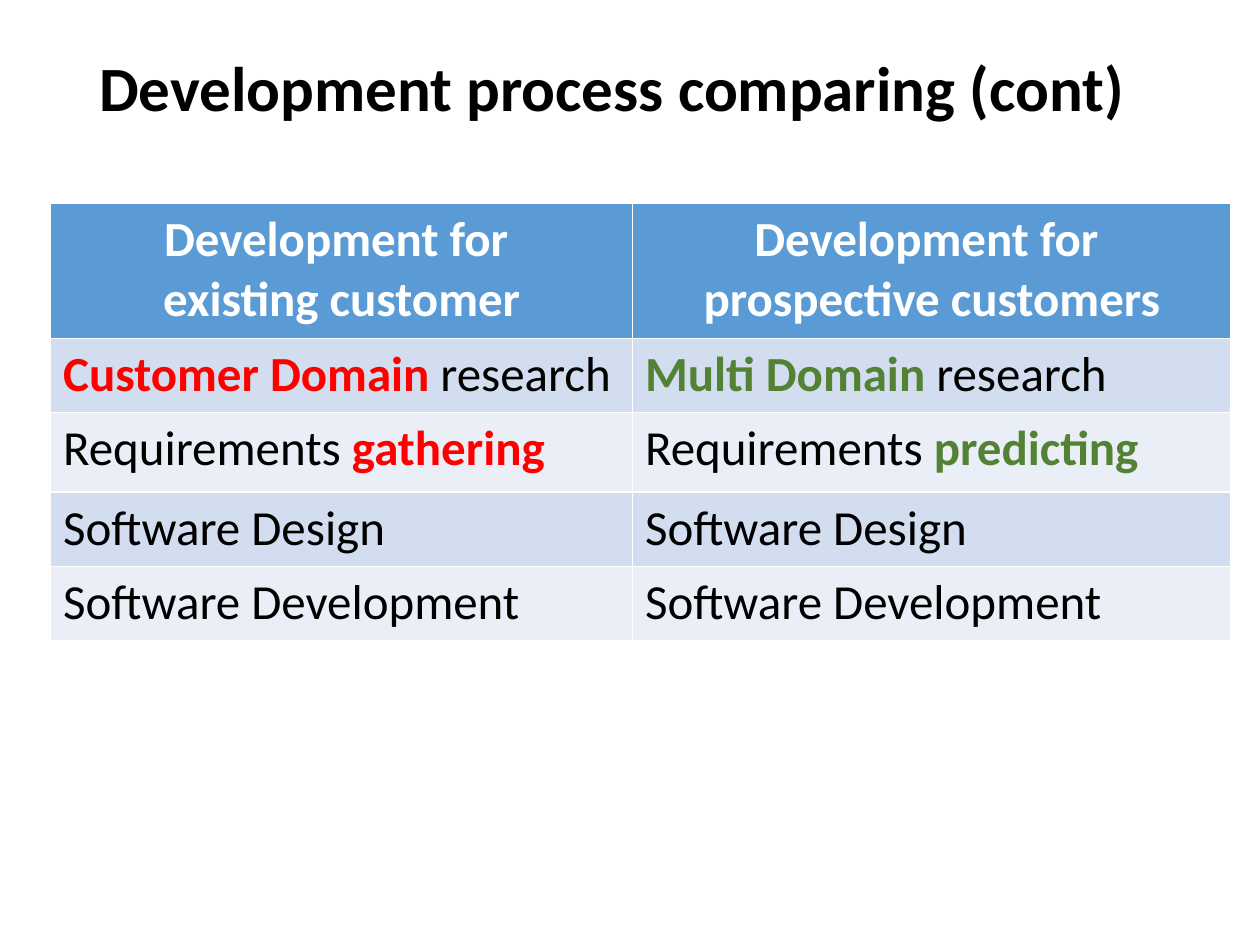
"""Build a slide comparing two development processes in a table."""
import pptx
import pptx.util
import pptx.dml.color
import pptx.enum.text

Cm = pptx.util.Cm
Pt = pptx.util.Pt

FONT = "Calibri"
HUES = {
    "black": "000000",
    "white": "FFFFFF",
    "red": "FF0000",
    "green": "548235",
    "head": "5B9BD5",
    "dark": "D2DEEF",
    "light": "EAEFF7",
}
WIDTHS = [11.73, 12.07]
HEIGHTS = [2.72, 1.5, 1.6, 1.5, 1.5]
HEADS = [
    ["Development for ", "existing customer"],
    ["Development for ", "prospective customers"],
]
ROWS = [
    [[("Customer Domain ", "red"), ("research", "black")],
     [("Multi Domain ", "green"), ("research", "black")]],
    [[("Requirements ", "black"), ("gathering", "red")],
     [("Requirements ", "black"), ("predicting", "green")]],
    [[("Software Design", "black")]] * 2,
    [[("Software Development", "black")]] * 2,
]


def tint(name):
    return pptx.dml.color.RGBColor.from_string(HUES[name])


def add_run(para, text, size, hue, bold):
    run = para.add_run()
    run.text = text
    run.font.name = FONT
    run.font.size = Pt(size)
    run.font.bold = bold
    run.font.color.rgb = tint(hue)


def fill_cell(cell, hue):
    cell.fill.solid()
    cell.fill.fore_color.rgb = tint(hue)


def add_head(cell, lines):
    fill_cell(cell, "head")
    frame = cell.text_frame
    for i, line in enumerate(lines):
        para = frame.add_paragraph() if i else frame.paragraphs[0]
        para.alignment = pptx.enum.text.PP_ALIGN.CENTER
        add_run(para, line, 28, "white", True)


def add_entry(cell, parts, band):
    fill_cell(cell, band)
    for text, hue in parts:
        add_run(cell.text_frame.paragraphs[0], text, 28, hue, hue != "black")


def add_grid(slide):
    frame = slide.shapes.add_table(
        len(HEIGHTS), len(WIDTHS), Cm(1.02), Cm(4.1),
        Cm(sum(WIDTHS)), Cm(sum(HEIGHTS)))
    grid = frame.table
    for col, width in zip(grid.columns, WIDTHS):
        col.width = Cm(width)
    for row, height in zip(grid.rows, HEIGHTS):
        row.height = Cm(height)
    for c, lines in enumerate(HEADS):
        add_head(grid.cell(0, c), lines)
    for r, row in enumerate(ROWS, 1):
        for c, parts in enumerate(row):
            add_entry(grid.cell(r, c), parts, "dark" if r % 2 else "light")


def add_title(slide, text):
    box = slide.shapes.add_textbox(Cm(1.75), Cm(1.02), Cm(23.06), Cm(1.65))
    frame = box.text_frame
    frame.word_wrap = True
    frame.vertical_anchor = pptx.enum.text.MSO_ANCHOR.MIDDLE
    para = frame.paragraphs[0]
    para.line_spacing = 0.9
    add_run(para, text, 36, "black", True)


def main():
    deck = pptx.Presentation()
    deck.slide_width = Cm(25.4)
    deck.slide_height = Cm(19.05)
    slide = deck.slides.add_slide(deck.slide_layouts[6])
    add_grid(slide)
    add_title(slide, "Development process comparing (cont)")
    deck.save("out.pptx")


if __name__ == "__main__":
    main()
